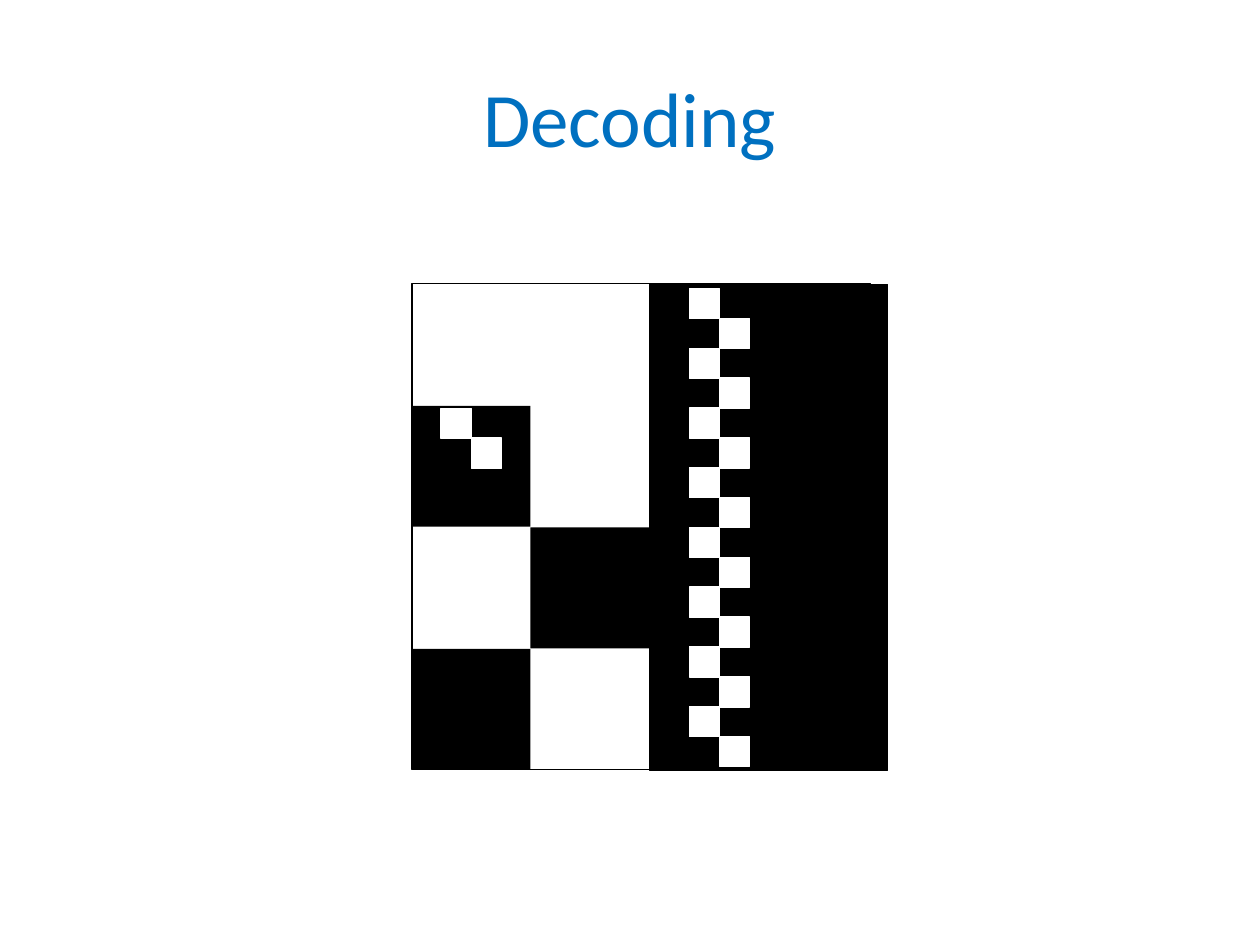
from pptx import Presentation
from pptx.dml.color import RGBColor
from pptx.enum import shapes, text
from pptx.util import Inches, Pt

BLUE = RGBColor(0x00, 0x70, 0xC0)
BLACK = RGBColor(0, 0, 0)
WHITE = RGBColor(255, 255, 255)

TITLE = "Decoding"
FONT = {"name": "Calibri", "size": Pt(44)}
FRAME = (3.16, 2.36, 3.86, 3.64)
PANEL = (4.17, 3.24, 3.86, 1.89)
CELLS = [(0, 0), (1, 1), (0, 2)]
CELL = (0.96, 0.94)
ORIGIN = (3.26, 3.23)
STEP = (0.94, 0.965)
DOT = 0.24
PITCH = 0.237
TRAILS = [(3.5, 3.24, 2), (5.47, 2.29, 16)]


def add_box(group, box, fill=None, line=None, turn=0):
    rect = group.shapes.add_shape(
        shapes.MSO_SHAPE.RECTANGLE, *map(Inches, box))
    rect.shadow.inherit = False
    rect.rotation = turn
    if fill is None:
        rect.fill.background()
    else:
        rect.fill.solid()
        rect.fill.fore_color.rgb = fill
    if line is None:
        rect.line.fill.background()
    else:
        rect.line.color.rgb = line
        rect.line.width = Pt(0.75)


def add_title(slide):
    box = slide.shapes.add_textbox(*map(Inches, (0.5, 0.3, 9, 1.25)))
    frame = box.text_frame
    frame.word_wrap = True
    frame.vertical_anchor = text.MSO_ANCHOR.MIDDLE
    para = frame.paragraphs[0]
    para.alignment = text.PP_ALIGN.CENTER
    run = para.add_run()
    run.text = TITLE
    for key, value in FONT.items():
        setattr(run.font, key, value)
    run.font.color.rgb = BLUE


def add_code(slide):
    group = slide.shapes.add_group_shape()
    add_box(group, FRAME, line=BLACK, turn=270)
    add_box(group, PANEL, BLACK, BLACK, 270)
    for col, row in CELLS:
        left = ORIGIN[0] + col * STEP[0]
        top = ORIGIN[1] + row * STEP[1]
        add_box(group, (left, top, *CELL), BLACK, turn=270)
    for left, top, count in TRAILS:
        for i in range(count):
            spot = (left + i % 2 * DOT, top + i * PITCH, DOT, DOT)
            add_box(group, spot, WHITE, WHITE)


def main():
    deck = Presentation()
    deck.slide_width, deck.slide_height = Inches(10), Inches(7.5)
    slide = deck.slides.add_slide(deck.slide_layouts[6])
    add_title(slide)
    add_code(slide)
    deck.save("out.pptx")


if __name__ == "__main__":
    main()
